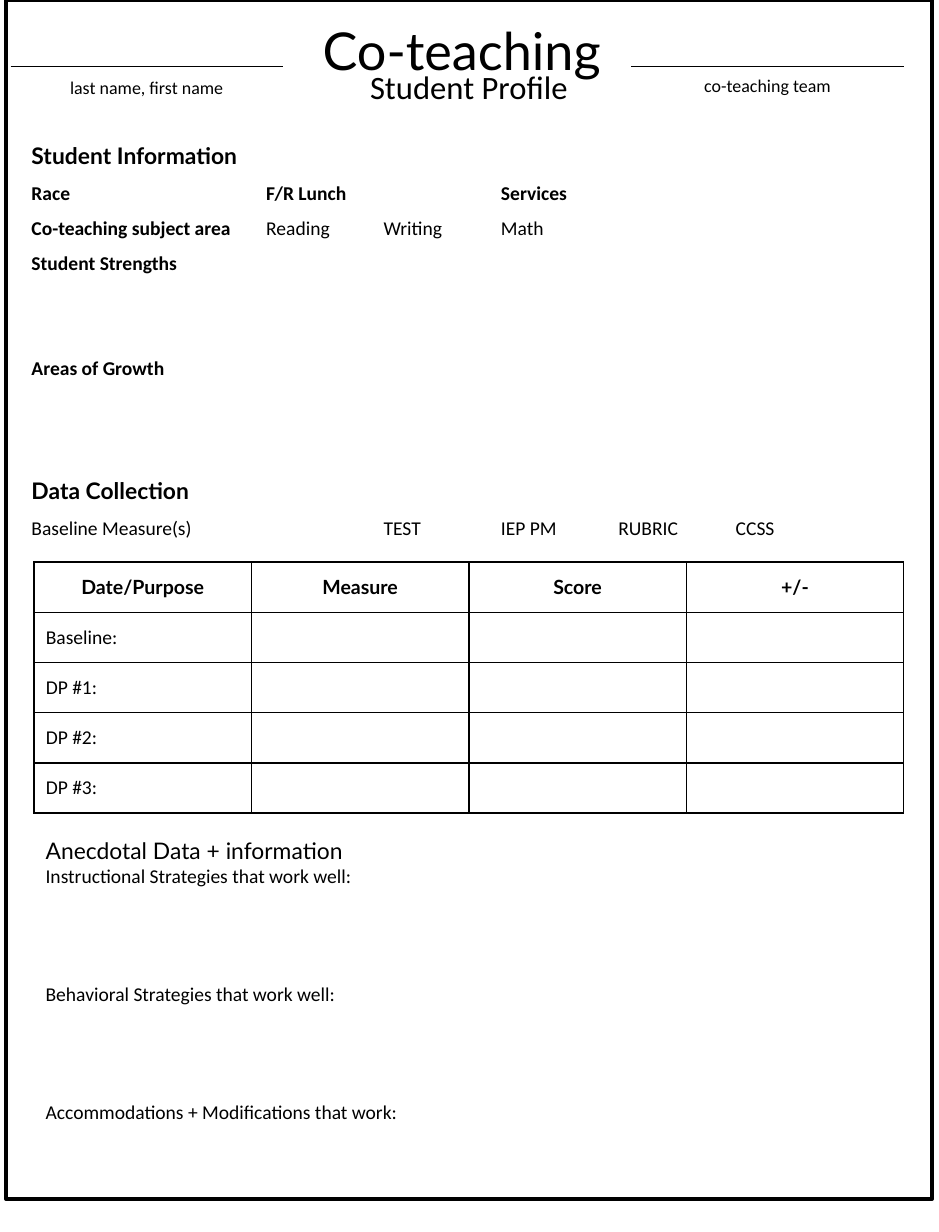
from lxml import etree
from pptx import Presentation
from pptx.dml.color import RGBColor
from pptx.enum import shapes, text
from pptx.oxml.ns import qn
from pptx.util import Inches, Pt

BLACK = RGBColor(0, 0, 0)
WHITE = RGBColor(255, 255, 255)
HEADING_FONT = "Lato"
BODY_FONT = "Calibri"
MARGIN = 0.29
CONTENT_WIDTH = 7.41


def style(paragraph, size, name=BODY_FONT, bold=False):
    font = paragraph.font
    font.size, font.name, font.bold = Pt(size), name, bold
    font.color.rgb = BLACK


def add_page_frame(slide):
    frame = slide.shapes.add_shape(
        shapes.MSO_SHAPE.RECTANGLE, Inches(0.05), 0, Inches(7.89), Inches(10.22))
    frame.shadow.inherit = False
    frame.fill.solid()
    frame.fill.fore_color.rgb = WHITE
    frame.line.color.rgb = BLACK
    frame.line.width = Pt(2.25)


def add_text_frame(slide, left, top, width, height):
    box = slide.shapes.add_textbox(
        Inches(left), Inches(top), Inches(width), Inches(height))
    box.text_frame.word_wrap = True
    return box.text_frame


def add_label(slide, wording, left, top, width, height, size, name=BODY_FONT):
    label = add_text_frame(slide, left, top, width, height).paragraphs[0]
    label.text = wording
    label.alignment = text.PP_ALIGN.CENTER
    style(label, size, name)


def add_name_line(slide, caption, left, top):
    """A rule to write on, with its caption below."""
    rule = slide.shapes.add_connector(
        shapes.MSO_CONNECTOR.STRAIGHT,
        Inches(left), Inches(0.57), Inches(left + 2.32), Inches(0.57))
    rule.line.color.rgb = BLACK
    rule.line.width = Pt(0.5)
    etree.SubElement(rule.line._get_or_add_ln().getparent(), qn("a:effectLst"))
    add_label(slide, caption, left, top, 2.32, 0.29, 11)


def set_tab_stops(paragraph, stops):
    tabs = etree.SubElement(paragraph._p.get_or_add_pPr(), qn("a:tabLst"))
    for stop in stops:
        etree.SubElement(tabs, qn("a:tab"), pos=str(Inches(stop)), algn="l")


def add_lines(frame, lines, spacing=1.0):
    """Each line is wording, size, font, bold, space before and tab stops."""
    for i, (wording, size, name, bold, before, stops) in enumerate(lines):
        line = frame.add_paragraph() if i else frame.paragraphs[0]
        line.line_spacing = spacing
        line.space_before = Pt(before)
        if stops:
            set_tab_stops(line, stops)
        lead, tab, choices = wording.partition("\t")
        line.add_run().text = lead
        style(line, size, name, bold)
        if tab:
            rest = line.add_run()
            rest.text = tab + choices
            if wording.startswith("Co-teaching"):
                rest.font.bold = False


def add_student_details(slide):
    add_lines(add_text_frame(slide, 0.17, 1.04, 7.64, 4.29), [
        ("Student Information", 14, HEADING_FONT, True, 0, ()),
        ("Race\tF/R Lunch\tServices", 12, BODY_FONT, True, 0, (2, 4)),
        ("Co-teaching subject area\tReading\tWriting\tMath",
         12, BODY_FONT, True, 0, (2, 3, 4)),
        ("Student Strengths", 12, BODY_FONT, True, 0, ()),
        ("Areas of Growth", 12, BODY_FONT, True, 43, ()),
        ("Data Collection", 14, HEADING_FONT, True, 51, ()),
        ("Baseline Measure(s)\tTEST\tIEP PM\tRUBRIC\tCCSS",
         12, BODY_FONT, False, 0, (3, 4, 5, 6)),
    ], spacing=1.5)


def add_anecdotal_notes(slide):
    add_lines(add_text_frame(slide, MARGIN, 7.08, CONTENT_WIDTH, 3.23), [
        ("Anecdotal Data + information", 14, HEADING_FONT, False, 0, ()),
        ("Instructional Strategies that work well:", 12, BODY_FONT, False, 0, ()),
        ("Behavioral Strategies that work well:", 12, BODY_FONT, False, 58, ()),
        ("Accommodations + Modifications that work:", 12, BODY_FONT, False, 58, ()),
    ])


def add_borders(cell):
    properties = cell._tc.get_or_add_tcPr()
    for i, side in enumerate(("lnL", "lnR", "lnT", "lnB")):
        border = etree.Element(qn(f"a:{side}"), w=str(Pt(1)))
        fill = etree.SubElement(border, qn("a:solidFill"))
        etree.SubElement(fill, qn("a:srgbClr"), val=str(BLACK))
        properties.insert(i, border)


def add_score_table(slide):
    headings = ("Date/Purpose", "Measure", "Score", "+/-")
    row_names = ("Baseline:", "DP #1:", "DP #2:", "DP #3:")
    rows = [headings] + [(name, "", "", "") for name in row_names]
    table = slide.shapes.add_table(
        len(rows), len(headings), Inches(MARGIN), Inches(4.79),
        Inches(CONTENT_WIDTH), Inches(2.14)).table
    table.first_row = table.horz_banding = False
    for r, row in enumerate(rows):
        for c, wording in enumerate(row):
            cell = table.cell(r, c)
            cell.text = wording
            cell.vertical_anchor = text.MSO_ANCHOR.MIDDLE
            cell.fill.background()
            add_borders(cell)
            entry = cell.text_frame.paragraphs[0]
            if r == 0:
                entry.alignment = text.PP_ALIGN.CENTER
                style(entry, 12, HEADING_FONT, True)
            else:
                style(entry, 12)


def main():
    deck = Presentation()
    deck.slide_width, deck.slide_height = Inches(8), Inches(10.5)
    slide = deck.slides.add_slide(deck.slide_layouts[6])
    add_page_frame(slide)
    add_label(slide, "Student Profile", 3.03, 0.52, 1.93, 0.45, 20)
    add_label(slide, "Co-teaching", 2, 0.11, 3.87, 0.64, 32, HEADING_FONT)
    add_student_details(slide)
    add_name_line(slide, "last name, first name", 0.09, 0.6)
    add_score_table(slide)
    add_anecdotal_notes(slide)
    add_name_line(slide, "co-teaching team", 5.38, 0.59)
    deck.save("out.pptx")


if __name__ == "__main__":
    main()
